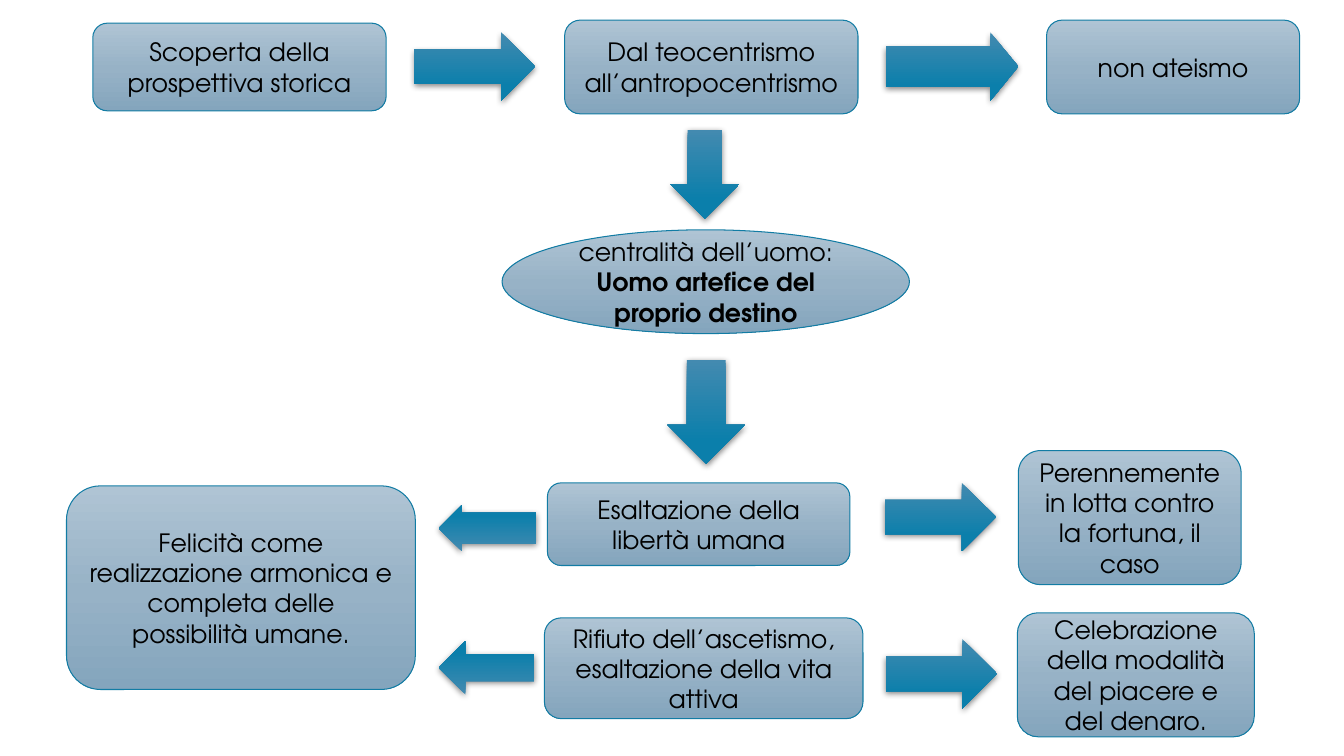
from dataclasses import dataclass
from lxml.etree import SubElement
from pptx import Presentation
from pptx.dml.color import RGBColor
from pptx.enum.shapes import MSO_SHAPE
from pptx.enum.text import MSO_ANCHOR, PP_ALIGN
from pptx.oxml.ns import qn
from pptx.util import Inches, Pt


@dataclass(frozen=True)
class Theme:
    font: str = "TeX Gyre Adventor"
    size: int = 18
    ink: str = "000000"
    edge: str = "127CA4"
    width: float = 0.75
    panel: tuple = ((0, "AFC4D4"), (52, "97B2C6"), (100, "84A5BD"))
    arrow: tuple = ((0, "438AB0"), (78, "0B7FAB"))


THEME = Theme()
ROUND = MSO_SHAPE.ROUNDED_RECTANGLE
RIGHT = MSO_SHAPE.RIGHT_ARROW
DOWN = MSO_SHAPE.DOWN_ARROW


def add_grad(shape, stops):
    shape.fill.background()
    props = shape.fill._xPr
    blank = props.find(qn("a:noFill"))
    grad = blank.makeelement(qn("a:gradFill"), {"rotWithShape": "1"})
    props.replace(blank, grad)
    items = SubElement(grad, qn("a:gsLst"))
    for pos, color in stops:
        stop = SubElement(items, qn("a:gs"), pos=str(pos * 1000))
        SubElement(stop, qn("a:srgbClr"), val=color)
    SubElement(grad, qn("a:lin"), ang="5400000", scaled="0")


def add_shade(shape):
    effects = shape.fill._xPr.find(qn("a:effectLst"))
    shade = SubElement(effects, qn("a:outerShdw"), blurRad=str(Pt(4.5)),
                       dist=str(Pt(1.5)), dir="5400000", rotWithShape="0")
    color = SubElement(shade, qn("a:srgbClr"), val="000000")
    SubElement(color, qn("a:alpha"), val="48000")


def add_form(slide, kind, box, place, stops):
    left, top, width, height = place
    shape = slide.shapes.add_shape(kind, Inches(box[0] + left), Inches(box[1] + top),
                                   Inches(width), Inches(height))
    add_grad(shape, stops)
    shape.shadow.inherit = False
    return shape


def add_panel(slide, box, place, *runs, kind=ROUND):
    shape = add_form(slide, kind, box, place, THEME.panel)
    shape.line.color.rgb = RGBColor.from_string(THEME.edge)
    shape.line.width = Pt(THEME.width)
    frame = shape.text_frame
    frame.word_wrap = True
    frame.vertical_anchor = MSO_ANCHOR.MIDDLE
    para = frame.paragraphs[0]
    para.alignment = PP_ALIGN.CENTER
    for text, bold in runs:
        run = para.add_run()
        run.text = text
        run.font.name = THEME.font
        run.font.size = Pt(THEME.size)
        run.font.bold = bold
        run.font.color.rgb = RGBColor.from_string(THEME.ink)


def add_arrow(slide, box, place, kind=RIGHT, turn=0, adjust=(0.5, 0.5)):
    shape = add_form(slide, kind, box, place, THEME.arrow)
    shape.line.fill.background()
    shape.rotation = turn
    for index, value in enumerate(adjust):
        shape.adjustments[index] = value
    add_shade(shape)


def add_origins(slide, box):
    add_panel(slide, box, (0, 0.03, 2.91, 0.87), ("Scoperta della prospettiva storica", False))
    add_arrow(slide, box, (3.19, 0.12, 1.2, 0.68))
    add_panel(slide, box, (4.68, 0, 2.91, 0.93),
              ("Dal teocentrismo all’antropocentrismo", False))
    add_arrow(slide, box, (7.87, 0.12, 1.31, 0.68), adjust=(0.585, 0.409))
    add_panel(slide, box, (9.46, 0, 2.51, 0.93), ("non ateismo", False))


def add_centre(slide, box):
    add_arrow(slide, box, (1.67, 0, 0.68, 0.88), DOWN)
    add_panel(slide, box, (0, 0.99, 4.04, 1.03), ("centralità dell’uomo: ", False),
              ("Uomo artefice del proprio destino", True), kind=MSO_SHAPE.OVAL)
    add_arrow(slide, box, (1.64, 2.28, 0.77, 1.03), DOWN)


def add_joy(slide, box):
    add_panel(slide, box, (0, 0, 3.46, 2.02),
              ("Felicità come realizzazione armonica e completa delle possibilità umane.", False))
    add_arrow(slide, box, (3.69, 0.19, 0.97, 0.46), turn=180, adjust=(0.665, 0.5))
    add_arrow(slide, box, (3.69, 1.54, 0.95, 0.53), turn=180)


def add_freedom(slide, box):
    add_panel(slide, box, (0, 0.32, 3, 0.82), ("Esaltazione della libertà umana", False))
    add_arrow(slide, box, (3.35, 0.32, 1.1, 0.68))
    add_panel(slide, box, (4.67, 0, 2.21, 1.33),
              ("Perennemente in lotta contro la fortuna, il caso", False))


def add_active(slide, box):
    add_panel(slide, box, (0, 0.05, 3.16, 1),
              ("Rifiuto dell’ascetismo, esaltazione della vita attiva", False))
    add_arrow(slide, box, (3.39, 0.26, 1.1, 0.69))
    add_panel(slide, box, (4.69, 0, 2.35, 1.23),
              ("Celebrazione della modalità del piacere e del denaro.", False))


def main():
    deck = Presentation()
    deck.slide_width, deck.slide_height = Inches(13.33), Inches(7.5)
    slide = deck.slides.add_slide(deck.slide_layouts[6])
    add_origins(slide, (0.92, 0.2))
    add_centre(slide, (4.98, 1.29))
    add_joy(slide, (0.66, 4.82))
    add_freedom(slide, (5.43, 4.47))
    add_active(slide, (5.4, 6.08))
    deck.save("out.pptx")


if __name__ == "__main__":
    main()
